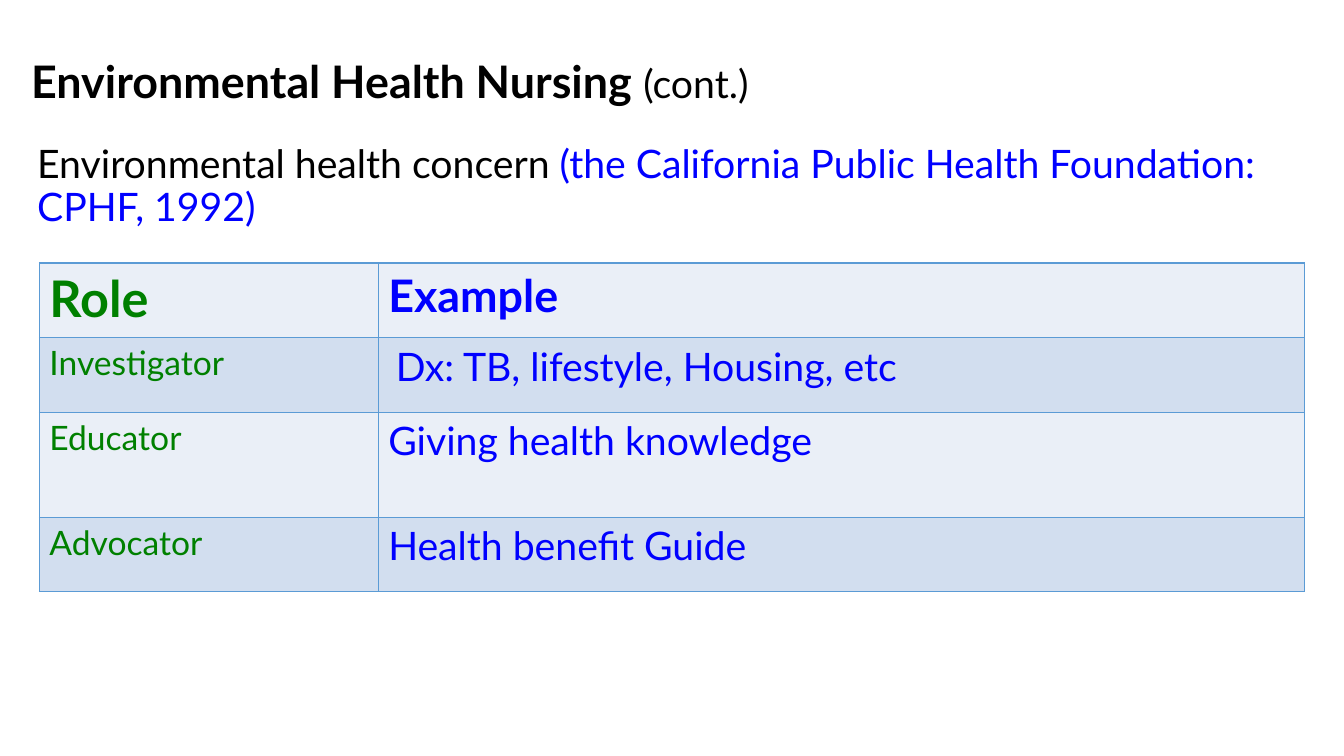
from dataclasses import dataclass

import pptx
import pptx.dml.color
import pptx.enum.text
import pptx.oxml
import pptx.oxml.ns
import pptx.util

# The slide is a grid of 100 columns by 100 rows.
WIDTH, HEIGHT = pptx.util.Inches(13.33), pptx.util.Inches(7.5)
FONT = "Lato"
BLACK, BLUE, GREEN = "000000", "0000FF", "008000"
BORDER, BANDS = "5B9BD5", ("EAEFF7", "D2DEEF")
MIDDLE = pptx.enum.text.MSO_ANCHOR.MIDDLE
TOP = pptx.enum.text.MSO_ANCHOR.TOP


@dataclass
class Run:
    text: str
    size: int
    color: str
    bold: bool = False


@dataclass
class Block:
    left: float
    top: float
    width: float
    height: float
    anchor: pptx.enum.text.MSO_ANCHOR
    runs: list[Run]


@dataclass
class RoleRow:
    height: float
    role: Run
    example: Run
    indent: float = 0


BLOCKS = [
    Block(1.58, 4.8, 97.22, 12.53, MIDDLE, [
        Run("Environmental Health Nursing ", 32, BLACK, True),
        Run("(cont.)", 28, BLACK)]),
    Block(2.03, 18.53, 96.32, 72.93, TOP, [
        Run("Environmental health concern ", 28, BLACK),
        Run("(the California Public Health Foundation: CPHF, 1992)", 28, BLUE)]),
]

TABLE_LEFT, TABLE_TOP = 2.93, 34.8
COLUMNS = (25.21, 68.94)
ROWS = [
    RoleRow(9.87, Run("Role", 36, GREEN, True), Run("Example", 32, BLUE, True)),
    RoleRow(9.87, Run("Investigator", 24, GREEN),
            Run("Dx: TB, lifestyle, Housing, etc", 28, BLUE), indent=0.56),
    RoleRow(13.87, Run("Educator", 24, GREEN), Run("Giving health knowledge", 28, BLUE)),
    RoleRow(9.87, Run("Advocator", 24, GREEN), Run("Health benefit Guide", 28, BLUE)),
]


def rgb(color: str) -> pptx.dml.color.RGBColor:
    return pptx.dml.color.RGBColor.from_string(color)


def cols(n: float) -> int:
    return round(WIDTH * n / 100)


def rows(n: float) -> int:
    return round(HEIGHT * n / 100)


def add_run(p, run: Run) -> None:
    r = p.add_run()
    r.text = run.text
    formats = {"name": FONT, "size": pptx.util.Pt(run.size), "bold": run.bold}
    for name, value in formats.items():
        setattr(r.font, name, value)
    r.font.color.rgb = rgb(run.color)


def add_block(s, block: Block) -> None:
    sp = s.shapes.add_textbox(cols(block.left), rows(block.top),
                              cols(block.width), rows(block.height))
    tf = sp.text_frame
    tf.word_wrap = True
    tf.vertical_anchor = block.anchor
    p = tf.paragraphs[0]
    p.line_spacing = 0.9
    for run in block.runs:
        add_run(p, run)


def set_borders(cell) -> None:
    """Draw a one-point line on all four sides of the cell."""
    tc_pr = cell._tc.get_or_add_tcPr()
    for i, side in enumerate(("lnL", "lnR", "lnT", "lnB")):
        tc_pr.insert(i, pptx.oxml.parse_xml(
            f'<a:{side} {pptx.oxml.ns.nsdecls("a")} w="{pptx.util.Pt(1)}">'
            f'<a:solidFill><a:srgbClr val="{BORDER}"/></a:solidFill></a:{side}>'))


def add_role_table(s) -> None:
    sp = s.shapes.add_table(len(ROWS), len(COLUMNS), cols(TABLE_LEFT), rows(TABLE_TOP),
                            cols(sum(COLUMNS)), rows(sum(row.height for row in ROWS)))
    table = sp.table
    for flag in ("first_row", "horz_banding"):
        setattr(table, flag, False)
    for column, width in zip(table.columns, COLUMNS):
        column.width = cols(width)
    for i, row in enumerate(ROWS):
        table.rows[i].height = rows(row.height)
        for j, run in enumerate((row.role, row.example)):
            cell = table.cell(i, j)
            cell.fill.solid()
            cell.fill.fore_color.rgb = rgb(BANDS[i % 2])
            set_borders(cell)
            add_run(cell.text_frame.paragraphs[0], run)
        cell.margin_left += cols(row.indent)


def main() -> None:
    prs = pptx.Presentation()
    prs.slide_width, prs.slide_height = WIDTH, HEIGHT
    s = prs.slides.add_slide(prs.slide_layouts[6])
    for block in BLOCKS:
        add_block(s, block)
    add_role_table(s)
    prs.save("out.pptx")


if __name__ == "__main__":
    main()
